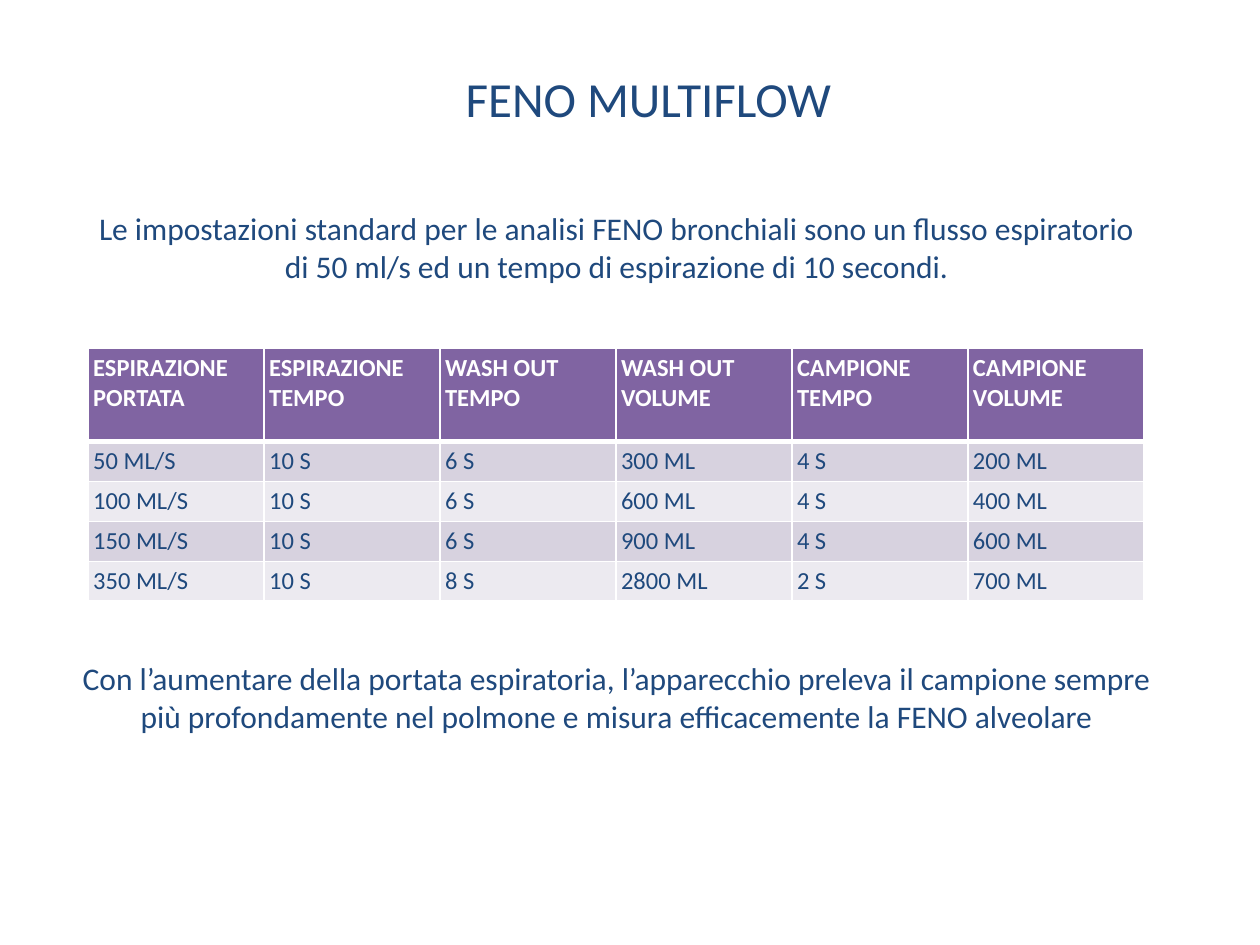
import dataclasses
import typing

import lxml.etree
import pptx
import pptx.dml.color
import pptx.enum.text
import pptx.oxml.ns
import pptx.util

Pt = pptx.util.Pt
qn = pptx.oxml.ns.qn
NAVY, WHITE, PURPLE = "1F497D", "FFFFFF", "8064A2"
BANDS = ("D7D2DF", "ECEAF0")
SIDES = ("left", "top", "width", "height")


@dataclasses.dataclass
class Block:
    text: str
    box: tuple[float, float, float, float]
    size: float


TITLE = Block("FENO MULTIFLOW", (66.24, 35.28, 608.4, 69.12), 28)
INTRO = Block(
    "Le impostazioni standard per le analisi FENO bronchiali sono un flusso "
    "espiratorio di 50 ml/s ed un tempo di espirazione di 10 secondi.",
    (44.64, 115.92, 615.6, 95.76), 18)
CLOSE = Block(
    "Con l’aumentare della portata espiratoria, l’apparecchio preleva il campione "
    "sempre più profondamente nel polmone e misura efficacemente la FENO alveolare",
    (34.56, 372.96, 635.76, 48.96), 18)
ROWS = (
    ("ESPIRAZIONE PORTATA", "ESPIRAZIONE TEMPO", "WASH OUT TEMPO",
     "WASH OUT VOLUME", "CAMPIONE TEMPO", "CAMPIONE VOLUME"),
    ("50 ML/S", "10 S", "6 S", "300 ML", "4 S", "200 ML"),
    ("100 ML/S", "10 S", "6 S", "600 ML", "4 S", "400 ML"),
    ("150 ML/S", "10 S", "6 S", "900 ML", "4 S", "600 ML"),
    ("350 ML/S", "10 S", "8 S", "2800 ML", "2 S", "700 ML"),
)


def color(code: str) -> pptx.dml.color.RGBColor:
    return pptx.dml.color.RGBColor.from_string(code)


def apply(item: typing.Any, form: dict[str, typing.Any]) -> None:
    for name, value in form.items():
        setattr(item, name, value)


def style(para: typing.Any, size: float, code: str, bold: bool = False) -> None:
    apply(para.font, {"name": "Calibri", "size": Pt(size), "bold": bold})
    para.font.color.rgb = color(code)


def inset(gap: float) -> dict[str, typing.Any]:
    return {f"margin_{side}": Pt(gap) for side in ("left", "top", "right", "bottom")}


def write(shape: typing.Any, block: Block) -> None:
    apply(shape, dict(zip(SIDES, map(Pt, block.box))))
    frame = shape.text_frame
    apply(frame, inset(3.6) | {
        "text": block.text, "word_wrap": True,
        "auto_size": pptx.enum.text.MSO_AUTO_SIZE.NONE,
        "vertical_anchor": pptx.enum.text.MSO_ANCHOR.TOP})
    para = frame.paragraphs[0]
    apply(para, {"alignment": pptx.enum.text.PP_ALIGN.CENTER, "space_before": Pt(0)})
    if shape.is_placeholder:
        # No bullet and no hanging indent
        props = para._p.get_or_add_pPr()
        props.set("marL", "0")
        props.set("indent", "0")
        lxml.etree.SubElement(props, qn("a:buNone"))
    style(para, block.size, NAVY)


def border(cell: typing.Any, widths: dict[str, float]) -> None:
    props = cell._tc.get_or_add_tcPr()
    for side, width in widths.items():
        line = lxml.etree.SubElement(props, qn(f"a:ln{side}"), w=str(int(Pt(width))))
        fill = lxml.etree.SubElement(line, qn("a:solidFill"))
        lxml.etree.SubElement(fill, qn("a:srgbClr"), val=WHITE)


def grid(slide: typing.Any) -> None:
    count = len(ROWS[0])
    table = slide.shapes.add_table(
        len(ROWS), count, Pt(50.4), Pt(199.1), Pt(603.4), Pt(141)).table
    for col in table.columns:
        col.width = Pt(603.4 / count)
    for i, row in enumerate(ROWS):
        head = i == 0
        table.rows[i].height = Pt(53.28 if head else 22.3)
        for j, text in enumerate(row):
            cell = table.cell(i, j)
            border(cell, {"L": 1, "R": 1, "T": 3 if i == 1 else 1, "B": 3 if head else 1})
            apply(cell, inset(2.88) | {"text": text})
            cell.fill.solid()
            cell.fill.fore_color.rgb = color(PURPLE if head else BANDS[(i - 1) % 2])
            style(cell.text_frame.paragraphs[0], 14, WHITE if head else NAVY, head)


def main() -> None:
    deck = pptx.Presentation()
    apply(deck, {"slide_width": Pt(720), "slide_height": Pt(540)})
    slide = deck.slides.add_slide(deck.slide_layouts[1])
    # Title and opening text
    write(slide.shapes.title, TITLE)
    write(slide.placeholders[1], INTRO)
    # Table of flow settings
    grid(slide)
    # Closing text
    write(slide.shapes.add_textbox(*map(Pt, CLOSE.box)), CLOSE)
    deck.save("out.pptx")


if __name__ == "__main__":
    main()
